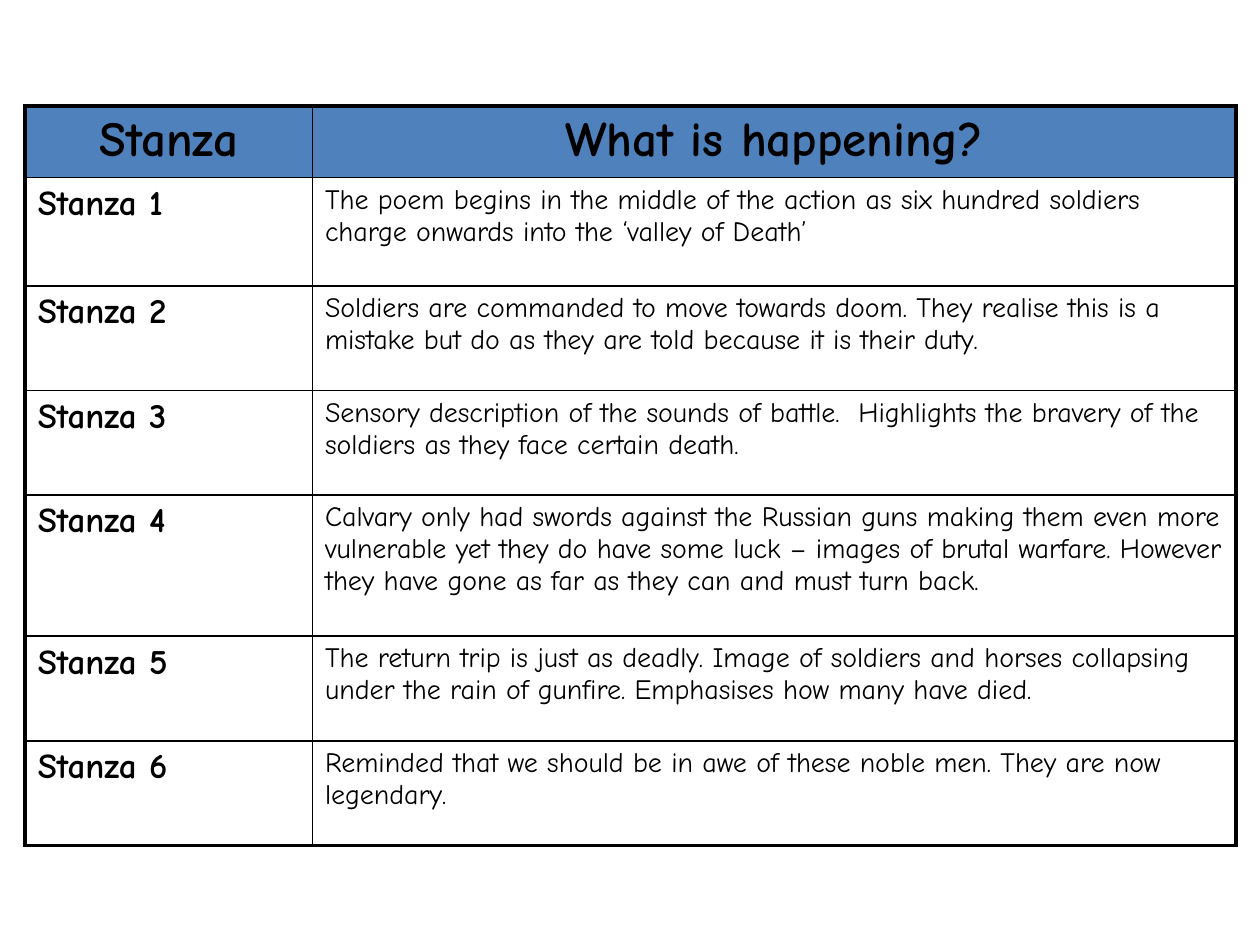
from dataclasses import dataclass

from lxml.etree import SubElement
from pptx import Presentation
from pptx.dml.color import RGBColor as RGB
from pptx.enum.text import PP_ALIGN as Align
from pptx.oxml.ns import qn
from pptx.table import _Cell as Cell
from pptx.util import Inches, Pt

COLORS = {"header": "4F81BD", "body": "FFFFFF", "ink": "000000"}
FONT = "Comic Neue"
OUTER, INNER = 2.25, 1
COL_WIDTHS = (2.28, 7.33)
HEADER_HEIGHT = 0.57


@dataclass
class Stanza:
    summary: str
    height: float = 0.83


HEADINGS = ("Stanza", "What is happening?")
STANZAS = [
    Stanza("The poem begins in the middle of the action as six hundred soldiers "
           "charge onwards into the ‘valley of Death’", 0.86),
    Stanza("Soldiers are commanded to move towards doom. They realise this is a "
           "mistake but do as they are told because it is their duty."),
    Stanza("Sensory description of the sounds of battle.  Highlights the bravery "
           "of the soldiers as they face certain death."),
    Stanza("Calvary only had swords against the Russian guns making them even more "
           "vulnerable yet they do have some luck – images of brutal warfare. "
           "However they have gone as far as they can and must turn back.", 1.12),
    Stanza("The return trip is just as deadly. Image of soldiers and horses "
           "collapsing under the rain of gunfire. Emphasises how many have died."),
    Stanza("Reminded that we should be in awe of these noble men. They are now "
           "legendary."),
]


def write(cell: Cell, text: str, *, size: float, bold: bool = True,
          align: Align = Align.LEFT, fill: str = "body") -> None:
    """Fill a cell and set its formatted text."""
    cell.fill.solid()
    cell.fill.fore_color.rgb = RGB.from_string(COLORS[fill])
    p = cell.text_frame.paragraphs[0]
    p.alignment = align
    r = p.add_run()
    r.text = text
    r.font.name, r.font.size, r.font.bold = FONT, Pt(size), bold
    r.font.color.rgb = RGB.from_string(COLORS["ink"])


def add_borders(cell: Cell, widths: dict[str, float]) -> None:
    """Draw cell borders; they precede the fill in the cell properties."""
    tc_pr = cell._tc.get_or_add_tcPr()
    for i, (side, width) in enumerate(widths.items()):
        ln = SubElement(tc_pr, qn(f"a:ln{side}"), w=str(Pt(width)))
        fill = SubElement(ln, qn("a:solidFill"))
        SubElement(fill, qn("a:srgbClr"), val=COLORS["ink"])
        tc_pr.insert(i, ln)


def main() -> None:
    prs = Presentation()
    prs.slide_width, prs.slide_height = Inches(10), Inches(7.5)
    s = prs.slides.add_slide(prs.slide_layouts[6])

    # Table grid
    heights = [HEADER_HEIGHT] + [stanza.height for stanza in STANZAS]
    rows, cols = len(heights), len(COL_WIDTHS)
    table = s.shapes.add_table(rows, cols, Inches(0.2), Inches(0.84),
                               Inches(sum(COL_WIDTHS)), Inches(sum(heights))).table
    table.horz_banding = False
    for column, width in zip(table.columns, COL_WIDTHS):
        column.width = Inches(width)
    for row, height in zip(table.rows, heights):
        row.height = Inches(height)

    # Header row
    for col, heading in enumerate(HEADINGS):
        write(table.cell(0, col), heading, size=28, align=Align.CENTER, fill="header")

    # One row per stanza
    for n, stanza in enumerate(STANZAS, start=1):
        write(table.cell(n, 0), f"Stanza {n}", size=20)
        write(table.cell(n, 1), stanza.summary, size=16, bold=False)

    # Heavy frame, thin inner rules
    for row in range(rows):
        for col in range(cols):
            at_edge = {"L": col == 0, "R": col == cols - 1,
                       "T": row == 0, "B": row == rows - 1}
            add_borders(table.cell(row, col),
                        {side: OUTER if edge else INNER for side, edge in at_edge.items()})

    prs.save("out.pptx")


if __name__ == "__main__":
    main()
